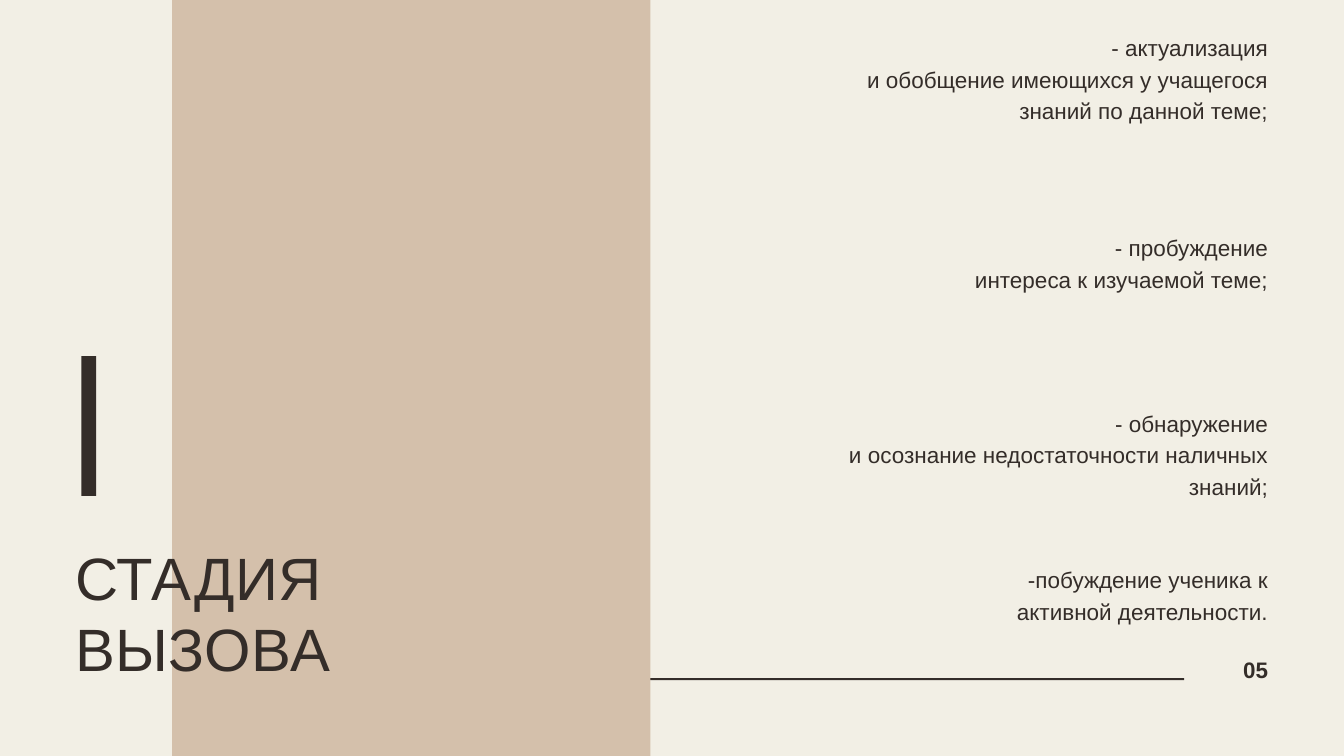
"""Build the slide that presents the goals of the challenge stage."""
import dataclasses

import pptx
import pptx.dml.color
import pptx.enum.shapes
import pptx.enum.text
import pptx.util
from pptx.util import Inches

CREAM = pptx.dml.color.RGBColor(0xF2, 0xEF, 0xE5)
SAND = pptx.dml.color.RGBColor(0xD4, 0xC0, 0xAB)
BROWN = pptx.dml.color.RGBColor(0x34, 0x2D, 0x29)

LEFT = pptx.enum.text.PP_ALIGN.LEFT
RIGHT = pptx.enum.text.PP_ALIGN.RIGHT

FRAME_FORMAT = {
    "margin_left": 0,
    "margin_top": 0,
    "margin_right": 0,
    "margin_bottom": 0,
    "word_wrap": True,
    "auto_size": pptx.enum.text.MSO_AUTO_SIZE.NONE,
    "vertical_anchor": pptx.enum.text.MSO_ANCHOR.TOP,
}


@dataclasses.dataclass(frozen=True)
class Box:
    left: float
    top: float
    width: float
    height: float

    def lengths(self) -> tuple:
        return tuple(Inches(side) for side in dataclasses.astuple(self))


@dataclasses.dataclass(frozen=True)
class Block:
    box: Box
    color: pptx.dml.color.RGBColor


@dataclasses.dataclass(frozen=True)
class TextStyle:
    size: float
    leading: float
    alignment: pptx.enum.text.PP_ALIGN
    bold: bool = False


@dataclasses.dataclass(frozen=True)
class Goal:
    top: float
    height: float
    lines: tuple


TITLE_STYLE = TextStyle(64, 76.8, LEFT)
GOAL_STYLE = TextStyle(24.1, 33.8, RIGHT)
NUMBER_STYLE = TextStyle(24, 28.8, RIGHT, bold=True)

BLOCKS = (
    Block(Box(7.58, 10.09, 10.04, 0.03), BROWN),
    Block(Box(2.56, -0.45, 7.12, 12.24), SAND),
    Block(Box(1.21, 5.3, 0.22, 2.08), BROWN),
)

GOALS = (
    Goal(0.44, 1.36, ("- актуализация", "и обобщение имеющихся у учащегося знаний по данной теме;")),
    Goal(3.42, 0.9, ("- пробуждение", "интереса к изучаемой теме;")),
    Goal(6.03, 1.36, ("- обнаружение", "и осознание недостаточности наличных знаний;")),
    Goal(8.36, 0.91, ("-побуждение ученика к", "активной деятельности.")),
)


def apply_format(target: object, values: dict) -> None:
    for attribute, value in values.items():
        setattr(target, attribute, value)


def draw_block(slide: pptx.slide.Slide, block: Block) -> None:
    rectangle = slide.shapes.add_shape(
        pptx.enum.shapes.MSO_SHAPE.RECTANGLE, *block.box.lengths()
    )
    rectangle.shadow.inherit = False
    rectangle.fill.solid()
    rectangle.fill.fore_color.rgb = block.color
    rectangle.line.fill.background()


def write_lines(frame: pptx.text.text.TextFrame, lines: tuple, style: TextStyle) -> None:
    apply_format(frame, FRAME_FORMAT)
    font_format = {
        "name": "Arial",
        "size": pptx.util.Pt(style.size),
        "bold": style.bold,
    }
    paragraph_format = {
        "alignment": style.alignment,
        "line_spacing": pptx.util.Pt(style.leading),
        "space_before": 0,
    }
    for index, line in enumerate(lines):
        paragraph = frame.add_paragraph() if index else frame.paragraphs[0]
        apply_format(paragraph, paragraph_format)
        run = paragraph.add_run()
        run.text = line
        apply_format(run.font, font_format)
        run.font.color.rgb = BROWN


def draw_text(slide: pptx.slide.Slide, box: Box, lines: tuple, style: TextStyle) -> None:
    write_lines(slide.shapes.add_textbox(*box.lengths()).text_frame, lines, style)


def draw_title(slide: pptx.slide.Slide, box: Box, wording: str) -> None:
    title = slide.shapes.title
    places = zip(("left", "top", "width", "height"), box.lengths())
    apply_format(title, dict(places))
    write_lines(title.text_frame, (wording,), TITLE_STYLE)
    run = title.text_frame.paragraphs[0].runs[0]
    run.font.element.set("spc", "60") if hasattr(run.font, "element") else (
        run._r.get_or_add_rPr().set("spc", "60")
    )
    slide.shapes[-1].element.addnext(title.element)


def main() -> None:
    presentation = pptx.Presentation()
    apply_format(
        presentation, {"slide_width": Inches(20), "slide_height": Inches(11.25)}
    )
    slide = presentation.slides.add_slide(presentation.slide_layouts[5])
    slide.background.fill.solid()
    slide.background.fill.fore_color.rgb = CREAM

    for block in BLOCKS:
        draw_block(slide, block)
    draw_title(slide, Box(1.12, 8.04, 6.87, 2.11), "СТАДИЯ ВЫЗОВА")
    for goal in GOALS:
        draw_text(slide, Box(12.6, goal.top, 6.27, goal.height), goal.lines, GOAL_STYLE)
    draw_text(slide, Box(18.11, 9.76, 0.76, 0.4), ("05",), NUMBER_STYLE)

    presentation.save("out.pptx")


if __name__ == "__main__":
    main()
